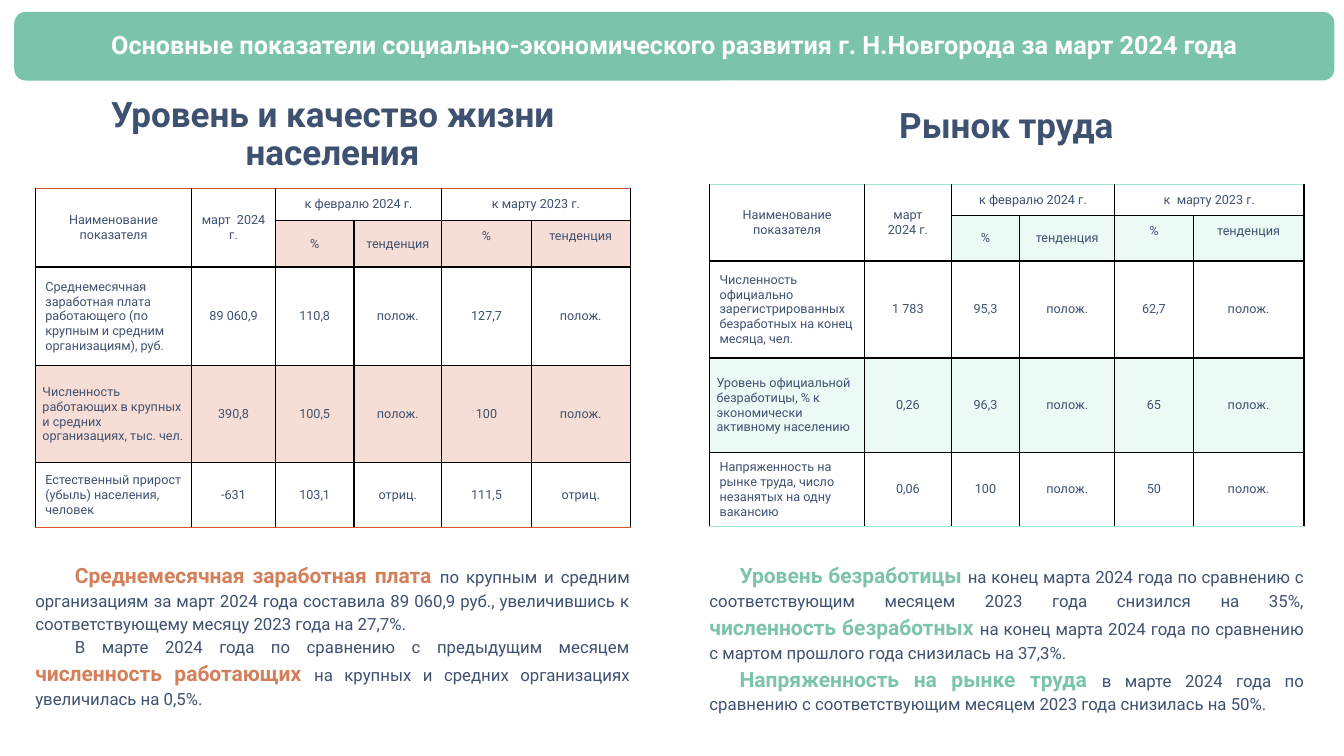
from lxml.etree import SubElement
from pptx import Presentation
from pptx.dml.color import RGBColor
from pptx.enum.shapes import MSO_SHAPE
from pptx.enum.text import MSO_ANCHOR, MSO_AUTO_SIZE, PP_ALIGN
from pptx.oxml.ns import qn
from pptx.util import Cm, Pt

COLORS = {"ink": "3F5170", "white": "FFFFFF", "mint": "7BC3AA",
          "orange": "D37F59", "rust": "D45731", "aqua": "9FE6CD"}

SALARY_ROWS = [
    ["Наименование показателя", "март  2024 г.", "к февралю 2024 г.", "", "к марту 2023 г.", ""],
    ["", "", "%", "тенденция", "%", "тенденция"],
    ["Среднемесячная заработная плата работающего (по крупным и средним организациям), руб.",
     "89 060,9", "110,8", "полож.", "127,7", "полож."],
    ["Численность работающих в крупных и средних организациях, тыс. чел.",
     "390,8", "100,5", "полож.", "100", "полож."],
    ["Естественный прирост (убыль) населения, человек",
     "-631", "103,1", "отриц.", "111,5", "отриц."],
]
LABOUR_ROWS = [
    ["Наименование показателя", "март\n2024 г.", "к февралю 2024 г.", "", "к  марту 2023 г.", ""],
    ["", "", "%", "тенденция", "%", "тенденция"],
    ["Численность официально зарегистрированных безработных на конец месяца, чел.",
     "1 783", "95,3", "полож.", "62,7", "полож."],
    ["Уровень официальной безработицы, % к экономически активному населению",
     "0,26", "96,3", "полож.", "65", "полож."],
    ["Напряженность на рынке труда, число незанятых на одну вакансию",
     "0,06", "100", "полож.", "50", "полож."],
]
SALARY_NOTES = [
    [("Среднемесячная заработная плата ", True),
     ("по крупным и средним организациям за март 2024 года составила 89 060,9 руб., "
      "увеличившись к соответствующему месяцу 2023 года на 27,7%.", False)],
    [("В марте 2024 года по сравнению с предыдущим месяцем ", False),
     ("численность работающих ", True),
     ("на крупных и средних организациях увеличилась на 0,5%.", False)],
]
LABOUR_NOTES = [
    [("Уровень безработицы ", True),
     ("на конец марта 2024 года по сравнению с соответствующим месяцем 2023 года "
      "снизился на 35%,", False),
     ("\n", False),
     ("численность безработных ", True),
     ("на конец марта 2024 года по сравнению с мартом прошлого года снизилась на 37,3%.", False)],
    [("Напряженность на рынке труда ", True),
     ("в марте 2024 года по сравнению с соответствующим месяцем 2023 года "
      "снизилась на 50%.", False)],
]


def assign(target, values):
    """Set every attribute named in values on target."""
    for name, value in values.items():
        setattr(target, name, value)


def margins(size):
    """Give the same inset to all four sides."""
    return {f"margin_{side}": Cm(size) for side in ("left", "top", "right", "bottom")}


class SlideWriter:
    """Holds the text style and the slide being filled."""

    font = "Roboto"

    def __init__(self, page):
        """Keep the page to draw on."""
        self.page = page

    def span(self, para, text, size, color="ink", bold=False):
        """Add one run, or a line break for a newline."""
        if text == "\n":
            para.add_line_break()
            mark = para._p.findall(qn("a:br"))[-1]
            SubElement(mark, qn("a:rPr"), sz=str(size * 100))
            return
        run = para.add_run()
        run.text = text
        assign(run.font, {"name": self.font, "size": Pt(size), "bold": bold})
        run.font.color.rgb = RGBColor.from_string(COLORS[color])

    def heading(self, shape, text, size, color, inset, anchor):
        """Fill a shape with one bold centred line of heading."""
        frame = shape.text_frame
        assign(frame, {"word_wrap": True, "auto_size": MSO_AUTO_SIZE.NONE,
                       "vertical_anchor": anchor, **margins(inset)})
        para = frame.paragraphs[0]
        assign(para, {"alignment": PP_ALIGN.CENTER, "line_spacing": 0.9})
        self.span(para, text, size, color, True)

    def banner(self, text, left, top, width, height):
        """Draw the rounded band and lay the title over it."""
        place = {"left": Cm(left), "top": Cm(top), "width": Cm(width), "height": Cm(height)}
        band = self.page.shapes.add_shape(MSO_SHAPE.ROUNDED_RECTANGLE, *place.values())
        band.shadow.inherit = False
        band.fill.solid()
        band.fill.fore_color.rgb = RGBColor.from_string(COLORS["mint"])
        band.line.fill.background()
        title = self.page.shapes.title
        assign(title, place)
        self.heading(title, text, 18, "white", 0.18, MSO_ANCHOR.MIDDLE)
        band._element.addnext(title._element)

    def subtitle(self, text, *place):
        """Add the heading of one half of the slide."""
        box = self.page.shapes.add_textbox(*map(Cm, place))
        self.heading(box, text, 25, "ink", 0.33, MSO_ANCHOR.TOP)

    def notes(self, paragraphs, accent, indent, *place):
        """Add justified paragraphs with accented phrases."""
        frame = self.page.shapes.add_textbox(*map(Cm, place)).text_frame
        frame.word_wrap = True
        for index, spans in enumerate(paragraphs):
            para = frame.add_paragraph() if index else frame.paragraphs[0]
            assign(para, {"alignment": PP_ALIGN.JUSTIFY, "line_spacing": 1.14})
            para._p.get_or_add_pPr().set("indent", str(int(Cm(indent))))
            for text, strong in spans:
                self.span(para, text, 15 if strong else 12, accent if strong else "ink", strong)

    def tint(self, cell, color):
        """Fill a cell with a one-fifth opaque colour."""
        cell.fill.solid()
        cell.fill.fore_color.rgb = RGBColor.from_string(COLORS[color])
        shade = cell._tc.tcPr.find(".//" + qn("a:srgbClr"))
        SubElement(shade, qn("a:alpha"), val="20000")

    def border(self, cell, side, color):
        """Rule one side of a cell."""
        properties = cell._tc.get_or_add_tcPr()
        line = SubElement(properties, qn(f"a:ln{side}"), w=str(int(Pt(1))))
        SubElement(SubElement(line, qn("a:solidFill")), qn("a:srgbClr"), val=COLORS[color])
        properties.insert(0, line)

    def table(self, rows, color, left, top, widths, heights):
        """Add an indicator table with a two-level header."""
        frame = self.page.shapes.add_table(len(rows), len(widths), Cm(left), Cm(top),
                                           Cm(sum(widths)), Cm(sum(heights)))
        grid = frame.table
        assign(grid, {"first_row": False, "horz_banding": False})
        properties = grid._tbl.tblPr
        properties.remove(properties.find(qn("a:tableStyleId")))
        for column, width in zip(grid.columns, widths):
            column.width = Cm(width)
        for row, height in zip(grid.rows, heights):
            row.height = Cm(height)
        for column in (0, 1):
            grid.cell(0, column).merge(grid.cell(1, column))
        for column in (2, 4):
            grid.cell(0, column).merge(grid.cell(0, column + 1))
        for r, texts in enumerate(rows):
            for c, text in enumerate(texts):
                cell = grid.cell(r, c)
                if cell.is_spanned:
                    continue
                self.cell(cell, text, r, c, color)
                if r == 0:
                    self.border(cell, "T", color)
                if r == len(rows) - 1:
                    self.border(cell, "B", color)

    def cell(self, cell, text, r, c, color):
        """Write and shade one table cell."""
        cell.vertical_anchor = MSO_ANCHOR.MIDDLE
        if r == 3 or (r == 1 and c > 1):
            self.tint(cell, color)
        else:
            cell.fill.background()
        if r == 1 and c > 3:
            cell.margin_bottom = Cm(0.5)
        if r == 3 and c == 0:
            assign(cell, {"margin_left": Cm(0.18), "margin_right": Cm(0.18),
                          "margin_top": Cm(0), "margin_bottom": Cm(0)})
        frame = cell.text_frame
        for index, line in enumerate(text.split("\n")):
            para = frame.add_paragraph() if index else frame.paragraphs[0]
            para.alignment = PP_ALIGN.LEFT if r > 1 and c == 0 else PP_ALIGN.CENTER
            self.span(para, line, 9)


def main():
    """Build the slide and save it."""
    deck = Presentation()
    assign(deck, {"slide_width": Cm(33.87), "slide_height": Cm(19.05)})
    writer = SlideWriter(deck.slides.add_slide(deck.slide_layouts[5]))
    writer.subtitle("Уровень и качество жизни населения", 0.76, 2.13, 15.24, 2.03)
    writer.table(SALARY_ROWS, "rust", 0.89, 4.75,
                 [3.94, 2.11, 1.98, 2.21, 2.26, 2.49], [0.81, 1.17, 2.49, 2.44, 1.63])
    writer.notes(SALARY_NOTES, "orange", 1, 0.64, 13.97, 15.49, 4.01)
    writer.subtitle("Рынок труда", 21.18, 2.41, 8.36, 1.47)
    writer.table(LABOUR_ROWS, "aqua", 17.88, 4.65,
                 [3.91, 2.18, 1.73, 2.39, 1.98, 2.79], [0.79, 1.14, 2.44, 2.39, 1.85])
    writer.notes(LABOUR_NOTES, "mint", 0.76, 17.63, 13.97, 15.49, 3.96)
    writer.banner("Основные показатели социально-экономического развития г. Н.Новгорода "
                  "за март 2024 года", 0.36, 0.3, 33.27, 1.73)
    deck.save("out.pptx")


if __name__ == "__main__":
    main()
